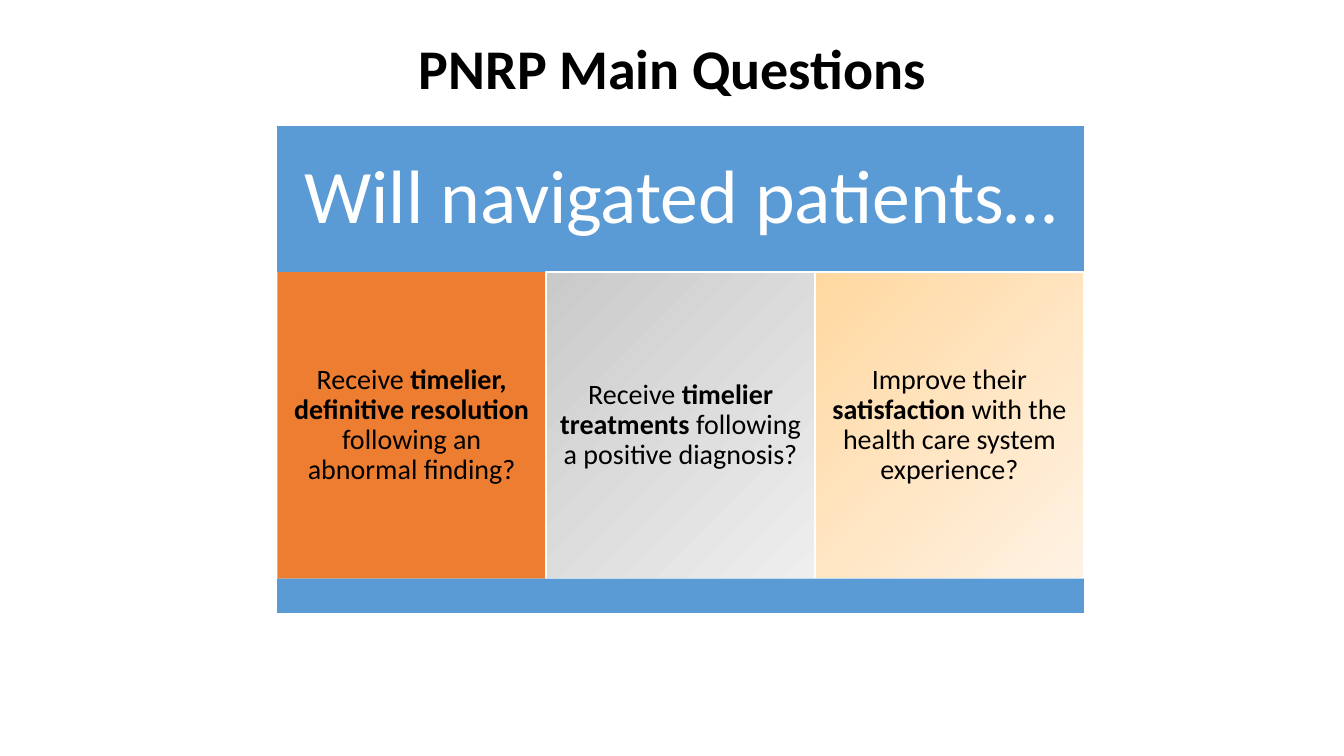
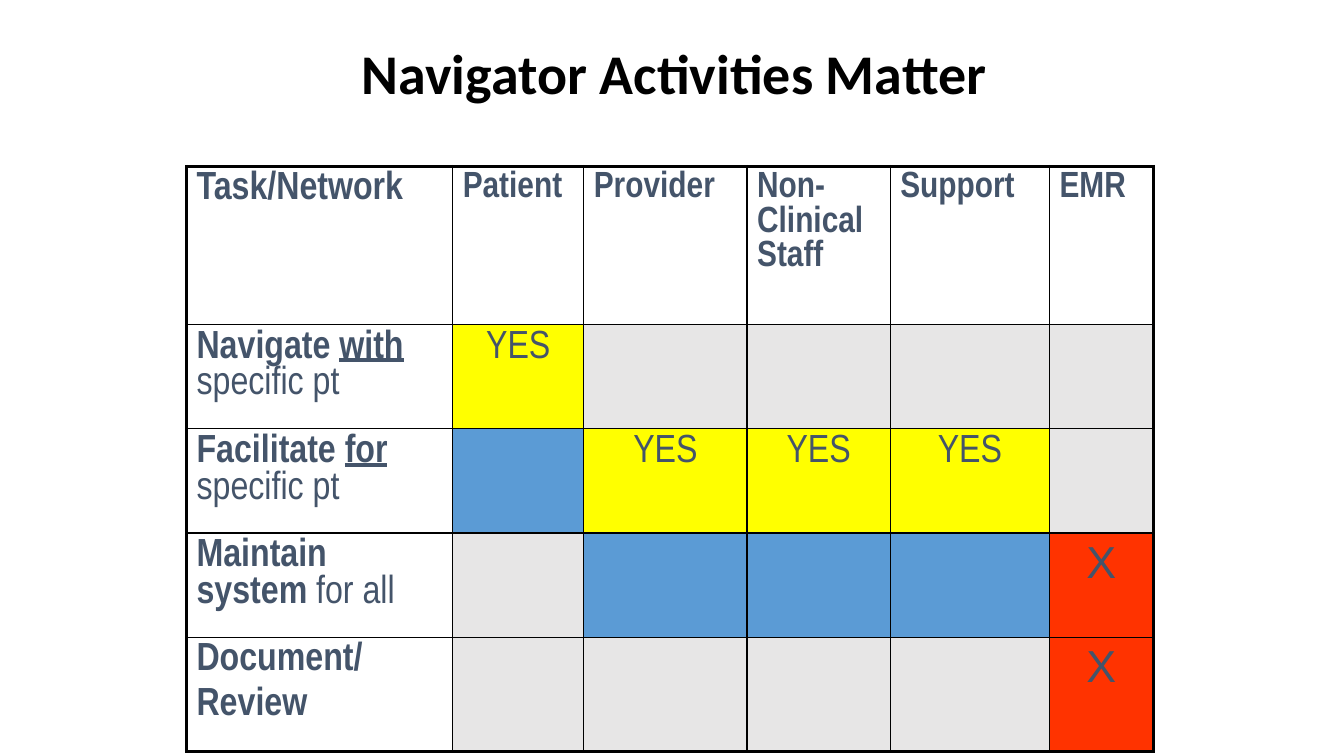
import pptx
import pptx.util
import pptx.dml.color
import pptx.enum.shapes
import pptx.enum.text
import pptx.oxml.ns
import lxml.etree

Inches, Pt = pptx.util.Inches, pptx.util.Pt
ALIGN = pptx.enum.text.PP_ALIGN
ANCHOR = pptx.enum.text.MSO_ANCHOR
RECT = pptx.enum.shapes.MSO_SHAPE.RECTANGLE

HUES = {
    "black": "000000", "white": "FFFFFF", "slate": "44546A",
    "blue": "5B9BD5", "orange": "ED7D31", "yellow": "FFFF00",
    "red": "FF3300", "gray": "E7E6E6",
    "silver": "CACACA", "mist": "EEEEEE", "peach": "FFD8A0", "cream": "FFF2E3",
}

# Rich text is a list of (text, style); style holds b for bold, u for underline.
LEAD = "Will navigated patients…"
PANELS = [
    (["orange"], [("Receive ", ""), ("timelier, definitive resolution ", "b"),
                  ("following an abnormal finding?", "")]),
    (["silver", "mist"], [("Receive ", ""), ("timelier treatments ", "b"),
                          ("following a positive diagnosis?", "")]),
    (["peach", "cream"], [("Improve their ", ""), ("satisfaction ", "b"),
                          ("with the health care system experience?", "")]),
]

HEADS = ["Task/Network", "Patient", "Provider", "Non-Clinical Staff",
         "Support", "EMR"]
TASKS = [
    ([[("Navigate ", "b"), ("with", "bu"), (" ", "b"), ("specific pt", "")]],
     ["yes", "none", "none", "none", "none"]),
    ([[("Facilitate ", "b"), ("for", "bu"), (" ", "b"), ("specific pt", "")]],
     ["part", "yes", "yes", "yes", "none"]),
    ([[("Maintain system ", "b"), ("for all", "")]],
     ["none", "part", "part", "part", "cross"]),
    ([[("Document/", "b")], [("Review", "b")]],
     ["none", "none", "none", "none", "cross"]),
]
# Each mark: fill, text, size, font
MARKS = {
    "yes": ("yellow", "YES", 28, "Arial Narrow"),
    "cross": ("red", "X", 32, "Arial"),
    "part": ("blue", "", 28, "Arial Narrow"),
    "none": ("gray", "", 28, "Arial Narrow"),
}
WIDTHS = [2.64, 1.3, 1.62, 1.42, 1.58, 1.03]
HEIGHTS = [1.57, 1.03, 1.03, 1.03, 1.13]


def rgb(name):
    return pptx.dml.color.RGBColor.from_string(HUES[name])


def write(frame, paras, size, hue="black", font="Calibri",
          align=ALIGN.CENTER, pitch=None, gap=0):
    frame.word_wrap = True
    for i, runs in enumerate(paras):
        para = frame.add_paragraph() if i else frame.paragraphs[0]
        para.alignment = align
        if pitch:
            para.line_spacing = pitch
        if i:
            para.space_before = Pt(gap)
        para.font.size, para.font.name = Pt(size), font
        para.font.color.rgb = rgb(hue)
        for text, style in runs:
            run = para.add_run()
            run.text = text
            if "b" in style:
                run.font.bold = True
            if "u" in style:
                run.font.underline = True


def title(slide, text, box, pitch=None):
    frame = slide.shapes.add_textbox(*map(Inches, box)).text_frame
    frame.vertical_anchor = ANCHOR.MIDDLE
    write(frame, [[(text, "b")]], 40, pitch=pitch)


def block(slide, box, hues, pad=0.08):
    """Add a rectangle, plain for one hue and a white-edged blend for two."""
    shape = slide.shapes.add_shape(RECT, *map(Inches, box))
    shape.shadow.inherit = False
    if len(hues) == 1:
        shape.fill.solid()
        shape.fill.fore_color.rgb = rgb(hues[0])
        shape.line.fill.background()
    else:
        shape.fill.gradient()
        shape.fill.gradient_angle = 315
        for stop, hue in zip(shape.fill.gradient_stops, hues):
            stop.color.rgb = rgb(hue)
        shape.line.color.rgb = rgb("white")
        shape.line.width = Pt(1)
    frame = shape.text_frame
    frame.vertical_anchor = ANCHOR.MIDDLE
    frame.margin_left = frame.margin_right = Inches(pad)
    frame.margin_top = frame.margin_bottom = Inches(pad)
    return frame


def edge(cell, sides):
    """Draw cell borders from a dict of side letter to width in points."""
    props = cell._tc.get_or_add_tcPr()
    qn = pptx.oxml.ns.qn
    for side, width in sides.items():
        line = lxml.etree.SubElement(props, qn("a:ln" + side), w=str(Pt(width)))
        fill = lxml.etree.SubElement(line, qn("a:solidFill"))
        lxml.etree.SubElement(fill, qn("a:srgbClr"), val=HUES["black"])


def ask(slide):
    title(slide, "PNRP Main Questions", (1.67, 0.17, 10, 1.08), 0.9)
    left, top, wide = 2.75, 1.25, 8
    head, body, foot = 1.45, 3.04, 0.34
    frame = block(slide, (left, top, wide, head), ["blue"], 0.23)
    write(frame, [[(LEAD, "")]], 54, "white", pitch=0.9)
    step = wide / len(PANELS)
    for i, (hues, runs) in enumerate(PANELS):
        frame = block(slide, (left + i * step, top + head, step, body), hues)
        write(frame, [runs], 20, pitch=0.9)
    block(slide, (left, top + head + body, wide, foot), ["blue"])


def chart(slide):
    rows, cols = len(HEIGHTS), len(WIDTHS)
    box = (1.85, 1.65, sum(WIDTHS), sum(HEIGHTS))
    table = slide.shapes.add_table(rows, cols, *map(Inches, box)).table
    table.first_row = table.horz_banding = False
    for col, width in zip(table.columns, WIDTHS):
        col.width = Inches(width)
    for row, height in zip(table.rows, HEIGHTS):
        row.height = Inches(height)
    for r in range(rows):
        for c in range(cols):
            cell = table.cell(r, c)
            ends = {"L": c == 0, "R": c == cols - 1,
                    "T": r == 0, "B": r == rows - 1}
            edge(cell, {side: 2.25 if end else 1 for side, end in ends.items()})
            size, font, align = 28, "Arial Narrow", ALIGN.LEFT
            if r and c:
                hue, text, size, font = MARKS[TASKS[r - 1][1][c - 1]]
                cell.fill.solid()
                cell.fill.fore_color.rgb = rgb(hue)
                paras, align = [[(text, "")]] if text else [], ALIGN.CENTER
            else:
                cell.fill.background()
                paras = TASKS[r - 1][0] if r else [[(HEADS[c], "b")]]
                size = 26 if c else 28
            write(cell.text_frame, paras, size, "slate", font, align, gap=5.6)
    title(slide, "Navigator Activities Matter", (1.85, 0.33, 9.67, 0.77))


def main():
    deck = pptx.Presentation()
    deck.slide_width, deck.slide_height = Inches(13.33), Inches(7.5)
    for build in (ask, chart):
        build(deck.slides.add_slide(deck.slide_layouts[6]))
    deck.save("out.pptx")


if __name__ == "__main__":
    main()
